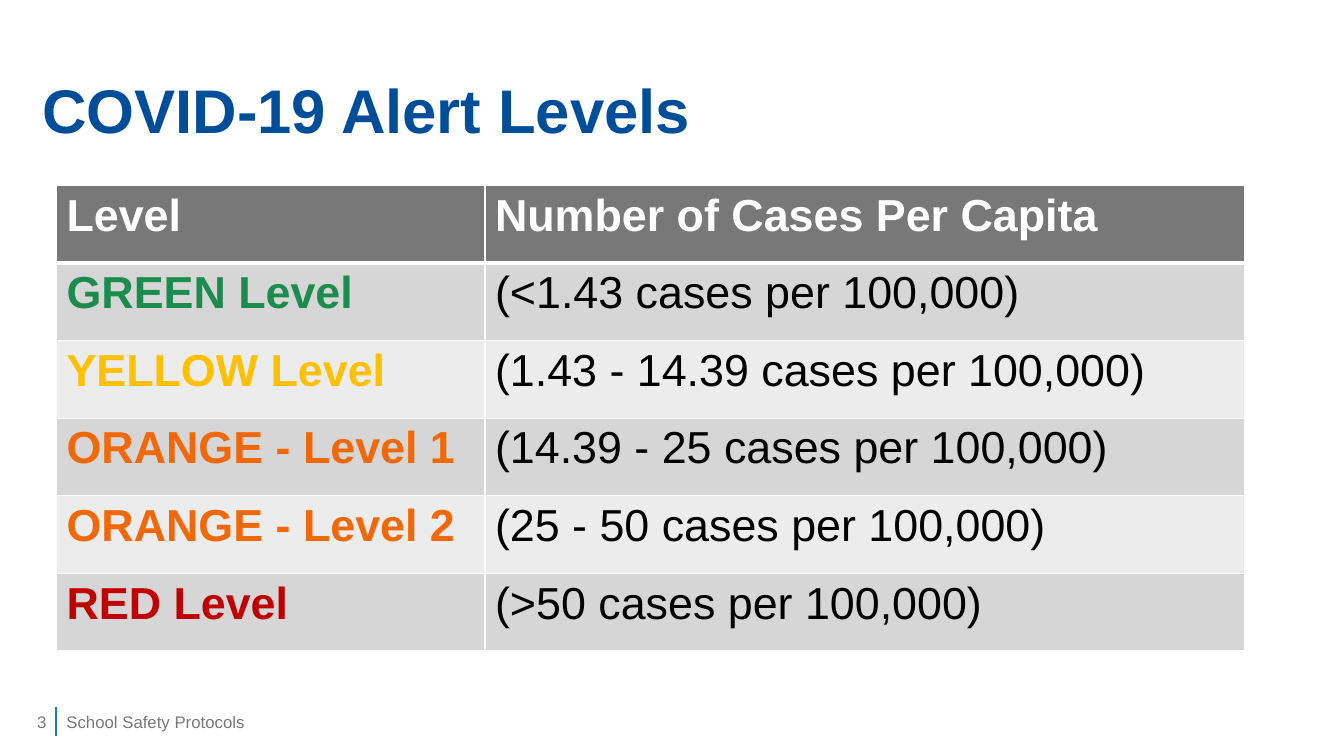
from lxml.etree import SubElement
from pptx import Presentation
from pptx.dml.color import RGBColor
from pptx.enum.shapes import MSO_CONNECTOR
from pptx.enum.text import MSO_ANCHOR, PP_ALIGN
from pptx.oxml.ns import qn
from pptx.util import Inches, Pt

WHITE = RGBColor(0xFF, 0xFF, 0xFF)
BLACK = RGBColor(0x00, 0x00, 0x00)
NAVY = RGBColor(0x00, 0x4E, 0x9A)
BLUE = RGBColor(0x18, 0x7B, 0xC0)
GRAY = RGBColor(0x78, 0x78, 0x78)
DARK = RGBColor(0xD6, 0xD6, 0xD6)
LIGHT = RGBColor(0xEC, 0xEC, 0xEC)
GREEN = RGBColor(0x1B, 0x8C, 0x4E)
YELLOW = RGBColor(0xFF, 0xC0, 0x00)
ORANGE = RGBColor(0xF0, 0x68, 0x07)
RED = RGBColor(0xC0, 0x00, 0x00)

# Grid, in inches
LEFT, TOP = 0.56, 1.84
COLS = (4.25, 7.53)
ROW = 0.77
FOOT, FOOT_H = 6.96, 0.4


def write(frame, text, size, color, bold=False):
    frame.text = text
    part = frame.paragraphs[0]
    font = part.runs[0].font
    font.name, font.size, font.bold = "Arial", Pt(size), bold
    font.color.rgb = color
    return part


def edge(cell, side, width):
    line = SubElement(cell._tc.get_or_add_tcPr(), qn("a:ln" + side), w=str(Pt(width)))
    fill = SubElement(line, qn("a:solidFill"))
    SubElement(fill, qn("a:srgbClr"), val=str(WHITE))


deck = Presentation()
deck.slide_width, deck.slide_height = Inches(13.33), Inches(7.5)
slide = deck.slides.add_slide(deck.slide_layouts[6])

# Footer rule
rule = slide.shapes.add_connector(
    MSO_CONNECTOR.STRAIGHT, Inches(LEFT), Inches(7.01), Inches(LEFT), Inches(7.3))
rule.line.color.rgb, rule.line.width = BLUE, Pt(1.5)
SubElement(rule._element.spPr, qn("a:effectLst"))

# Title, footer and page number
texts = [
    ("COVID-19 Alert Levels", (0.32, 0.4, 12.69, 1.45), 44, NAVY, True, PP_ALIGN.LEFT, 0.9),
    ("School Safety Protocols", (LEFT, FOOT, 6.52, FOOT_H), 12, GRAY, False, PP_ALIGN.LEFT, 1.0),
    ("3", (0, FOOT, LEFT, FOOT_H), 12, GRAY, False, PP_ALIGN.RIGHT, 1.0),
]
for text, place, size, color, bold, align, space in texts:
    frame = slide.shapes.add_textbox(*map(Inches, place)).text_frame
    frame.word_wrap = True
    frame.vertical_anchor = MSO_ANCHOR.MIDDLE
    part = write(frame, text, size, color, bold)
    part.alignment, part.line_spacing = align, space

# Alert level table
levels = [
    ("Level", "Number of Cases Per Capita", WHITE),
    ("GREEN Level", "(<1.43 cases per 100,000)", GREEN),
    ("YELLOW Level", "(1.43 - 14.39 cases per 100,000)", YELLOW),
    ("ORANGE - Level 1", "(14.39 - 25 cases per 100,000)", ORANGE),
    ("ORANGE - Level 2", "(25 - 50 cases per 100,000)", ORANGE),
    ("RED Level", "(>50 cases per 100,000)", RED),
]
table = slide.shapes.add_table(
    len(levels), len(COLS), Inches(LEFT), Inches(TOP),
    Inches(sum(COLS)), Inches(ROW * len(levels))).table
for col, width in zip(table.columns, COLS):
    col.width = Inches(width)

for r, (level, cases, color) in enumerate(levels):
    table.rows[r].height = Inches(ROW)
    head = r == 0
    for c, text in enumerate((level, cases)):
        cell = table.cell(r, c)
        ink = color if head or c == 0 else BLACK
        write(cell.text_frame, text, 32, ink, head or c == 0)
        for side in "LRTB":
            thick = (head and side == "B") or (r == 1 and side == "T")
            edge(cell, side, 3 if thick else 1)
        cell.fill.solid()
        cell.fill.fore_color.rgb = GRAY if head else DARK if r % 2 else LIGHT

deck.save("out.pptx")
